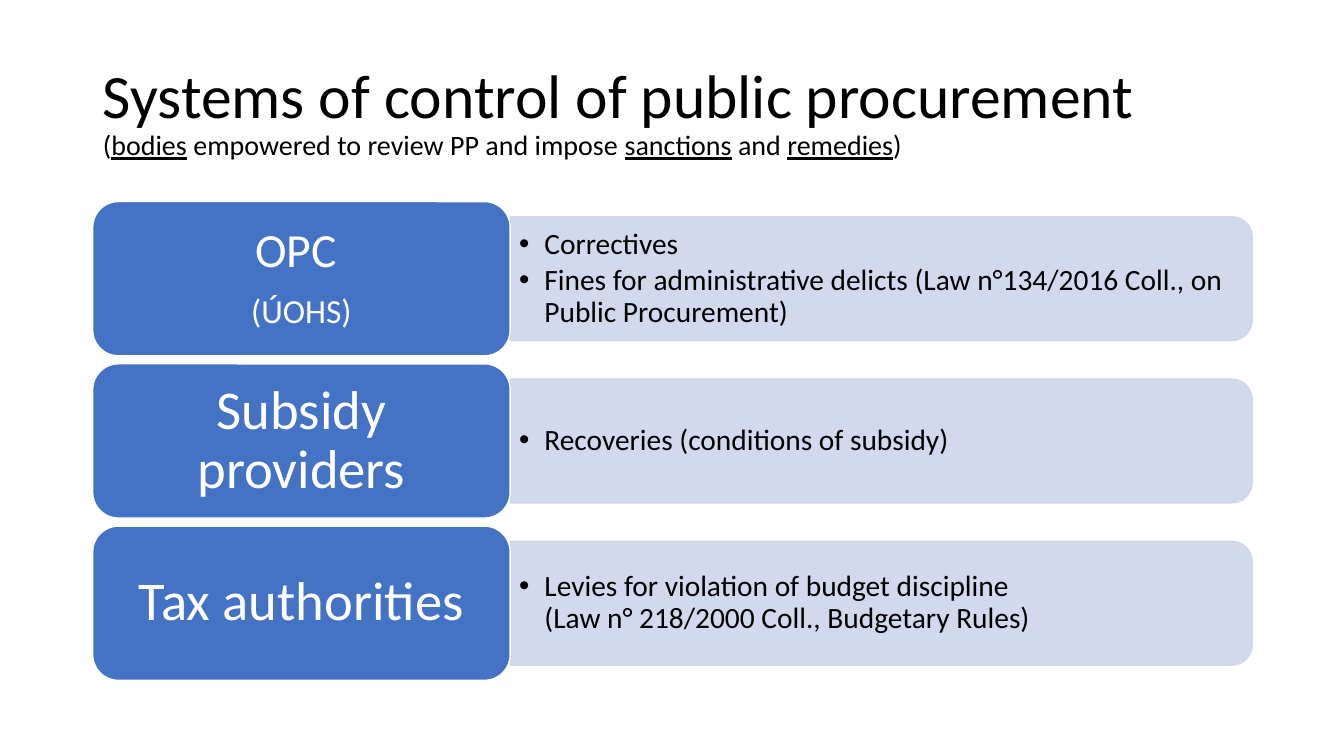
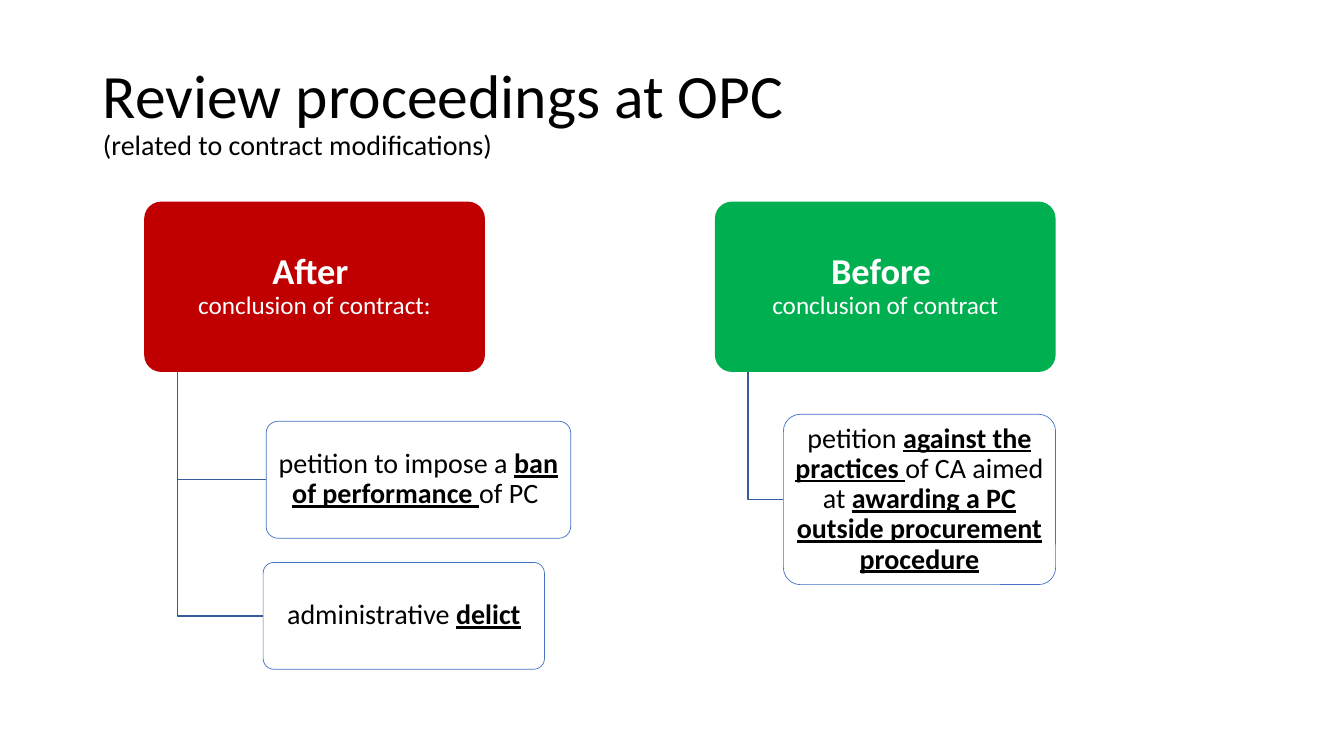
from dataclasses import dataclass

from lxml import etree
from pptx import Presentation
from pptx.dml.color import RGBColor
from pptx.enum.shapes import MSO_SHAPE
from pptx.enum.text import MSO_ANCHOR, MSO_AUTO_SIZE, PP_ALIGN
from pptx.oxml.ns import qn
from pptx.util import Pt

PX = 9144  # EMU; 100 px to the inch
ROUNDED = MSO_SHAPE.ROUNDED_RECTANGLE
TAB = MSO_SHAPE.ROUND_2_SAME_RECTANGLE
MIDDLE = MSO_ANCHOR.MIDDLE
LEFT, CENTER = PP_ALIGN.LEFT, PP_ALIGN.CENTER
NO_AUTOFIT = MSO_AUTO_SIZE.NONE


@dataclass(frozen=True)
class Theme:
    font: str = "Calibri"
    black: str = "000000"
    white: str = "FFFFFF"
    blue: str = "4472C4"
    pale: str = "CFD5EA"
    elbow: str = "365B9D"
    red: str = "C00000"
    green: str = "00B050"
    title: int = 44
    subtitle: int = 20
    body: int = 21
    label: int = 39
    head: int = 26
    head_note: int = 18
    child: int = 20
    line_spacing: float = 0.9
    opacity: int = 90


THEME = Theme()
SLIDE_SIZE = (1333, 750)
TITLE_BOX = (92, 40, 1150, 145)

# A paragraph is a list of runs: (text, size, style); style may hold b and u.
BODIES_TITLE = [
    ("Systems of control of public procurement\n", THEME.title, ""),
    ("(", THEME.subtitle, ""),
    ("bodies", THEME.subtitle, "u"),
    (" empowered to review PP and impose ", THEME.subtitle, ""),
    ("sanctions", THEME.subtitle, "u"),
    (" and ", THEME.subtitle, ""),
    ("remedies", THEME.subtitle, "u"),
    (")", THEME.subtitle, ""),
]
BODIES = [
    ([[("OPC ", 34, "")], [("(ÚOHS)", 24, "")]],
     ["Correctives",
      "Fines for administrative delicts (Law n°134/2016 Coll., on Public Procurement)"]),
    ([[("Subsidy providers", THEME.label, "")]],
     ["Recoveries (conditions of subsidy)"]),
    ([[("Tax authorities", THEME.label, "")]],
     ["Levies for violation of budget discipline\n(Law n° 218/2000 Coll., Budgetary Rules)"]),
]
ROW_TOP, ROW_PITCH = 200, 161
LABEL_LEFT, LABEL_WIDTH, LABEL_HEIGHT = 92, 414, 153
BAR_WIDTH, BAR_HEIGHT, BAR_TEXT_WIDTH = 736, 123, 730

REVIEW_TITLE = [
    ("Review proceedings at OPC\n", THEME.title, ""),
    ("(related to contract modifications)", THEME.subtitle, ""),
]
HEAD_TOP, HEAD_WIDTH, HEAD_HEIGHT = 200, 338, 169
BRANCHES = [
    {"left": 143, "color": THEME.red, "head": "After \n",
     "note": "conclusion of contract:",
     "children": [
         ((264, 418, 302, 116),
          [("petition to impose a ", ""), ("ban of performance ", "bu"), ("of PC ", "")]),
         ((261, 558, 279, 106),
          [("administrative ", ""), ("delict", "bu")]),
     ]},
    {"left": 709, "color": THEME.green, "head": "Before \n",
     "note": "conclusion of contract",
     "children": [
         ((777, 411, 270, 169),
          [("petition ", ""), ("against the practices ", "bu"), ("of CA aimed at ", ""),
           ("awarding a PC outside procurement procedure", "bu")]),
     ]},
]


def px(*lengths):
    return [round(length * PX) for length in lengths]


def rgb(color):
    return RGBColor.from_string(color)


def make_translucent(properties):
    """Give every solid colour below properties the theme's opacity."""
    for color in properties.iter(qn("a:srgbClr")):
        etree.SubElement(color, qn("a:alpha"), val=str(THEME.opacity * 1000))


def add_box(page, kind, bounds, fill, line=None, line_width=1, radius=None, translucent=False):
    box = page.shapes.add_shape(kind, *px(*bounds))
    box.shadow.inherit = False
    box.fill.solid()
    box.fill.fore_color.rgb = rgb(fill)
    if line:
        box.line.color.rgb = rgb(line)
        box.line.width = Pt(line_width)
    else:
        box.line.fill.background()
    if radius is not None:
        box.adjustments[0] = radius
    if translucent:
        make_translucent(box.element.spPr)
    return box


def add_span(para, text, size, style, color):
    for index, piece in enumerate(text.split("\n")):
        if index:
            para.add_line_break()
        if piece:
            span = para.add_run()
            span.text = piece
            font = span.font
            font.name, font.size = THEME.font, Pt(size)
            font.color.rgb = rgb(color)
            font.bold = "b" in style
            font.underline = "u" in style


def write(box, paragraphs, color, align, insets, gap=0):
    """Fill a box with paragraphs; gap is a share of the type size."""
    frame = box.text_frame
    frame.word_wrap = True
    frame.auto_size = NO_AUTOFIT
    frame.vertical_anchor = MIDDLE
    side, end = px(*insets)
    frame.margin_left = frame.margin_right = side
    frame.margin_top = frame.margin_bottom = end
    for index, runs in enumerate(paragraphs):
        para = frame.add_paragraph() if index else frame.paragraphs[0]
        para.alignment = align
        para.line_spacing = THEME.line_spacing
        para.space_before = Pt(0)
        last = index == len(paragraphs) - 1
        para.space_after = Pt(0 if last else round(gap * runs[0][1]))
        for text, size, style in runs:
            add_span(para, text, size, style, color)


def add_bullets(box, indent):
    for para in box.text_frame.paragraphs:
        properties = para._p.get_or_add_pPr()
        properties.set("marL", str(indent * PX))
        properties.set("indent", str(-indent * PX))
        etree.SubElement(properties, qn("a:buFont"), typeface="Arial")
        etree.SubElement(properties, qn("a:buChar"), char="•")


def add_page(deck, title_runs):
    page = deck.slides.add_slide(deck.slide_layouts[5])
    title = page.shapes.title
    title.left, title.top, title.width, title.height = px(*TITLE_BOX)
    write(title, [title_runs], THEME.black, LEFT, (10, 5))
    return page


def add_body_row(page, top, label, powers):
    bar_left = LABEL_LEFT + LABEL_WIDTH
    middle = top + LABEL_HEIGHT / 2
    # The bar is upright before its quarter turn about its centre.
    bar = add_box(page, TAB,
                  (bar_left + (BAR_WIDTH - BAR_HEIGHT) / 2, middle - BAR_WIDTH / 2,
                   BAR_HEIGHT, BAR_WIDTH),
                  THEME.pale, THEME.pale, translucent=True)
    bar.rotation = 90
    text_box = page.shapes.add_textbox(
        *px(bar_left, middle - BAR_HEIGHT / 2, BAR_TEXT_WIDTH, BAR_HEIGHT))
    write(text_box, [[(power, THEME.body, "")] for power in powers],
          THEME.black, LEFT, (9, 4), gap=0.15)
    add_bullets(text_box, 25)
    label_box = add_box(page, ROUNDED, (LABEL_LEFT, top, LABEL_WIDTH, LABEL_HEIGHT),
                        THEME.blue, THEME.white)
    write(label_box, label, THEME.white, CENTER, (15, 8), gap=0.35)


def add_elbow(page, x, top, corner, right):
    builder = page.shapes.build_freeform(*px(x, top))
    builder.add_line_segments([px(x, corner), px(right, corner)], close=False)
    elbow = builder.convert_to_shape()
    elbow.shadow.inherit = False
    elbow.fill.background()
    elbow.line.color.rgb = rgb(THEME.elbow)
    elbow.line.width = Pt(1)


def add_branch(page, branch):
    head = add_box(page, ROUNDED, (branch["left"], HEAD_TOP, HEAD_WIDTH, HEAD_HEIGHT),
                   branch["color"], radius=0.1)
    write(head, [[(branch["head"], THEME.head, "b"), (branch["note"], THEME.head_note, "")]],
          THEME.white, CENTER, (5, 4))
    for bounds, runs in branch["children"]:
        left, top, _, height = bounds
        add_elbow(page, branch["left"] + HEAD_WIDTH // 10, HEAD_TOP + HEAD_HEIGHT,
                  top + height / 2, left)
        child = add_box(page, ROUNDED, bounds, THEME.white, THEME.blue, 0.5, radius=0.1)
        write(child, [[(text, THEME.child, style) for text, style in runs]],
              THEME.black, CENTER, (4, 3))


def main():
    deck = Presentation()
    deck.slide_width, deck.slide_height = px(*SLIDE_SIZE)
    page = add_page(deck, BODIES_TITLE)
    for index, (label, powers) in enumerate(BODIES):
        add_body_row(page, ROW_TOP + index * ROW_PITCH, label, powers)
    page = add_page(deck, REVIEW_TITLE)
    for branch in BRANCHES:
        add_branch(page, branch)
    deck.save("out.pptx")


if __name__ == "__main__":
    main()
